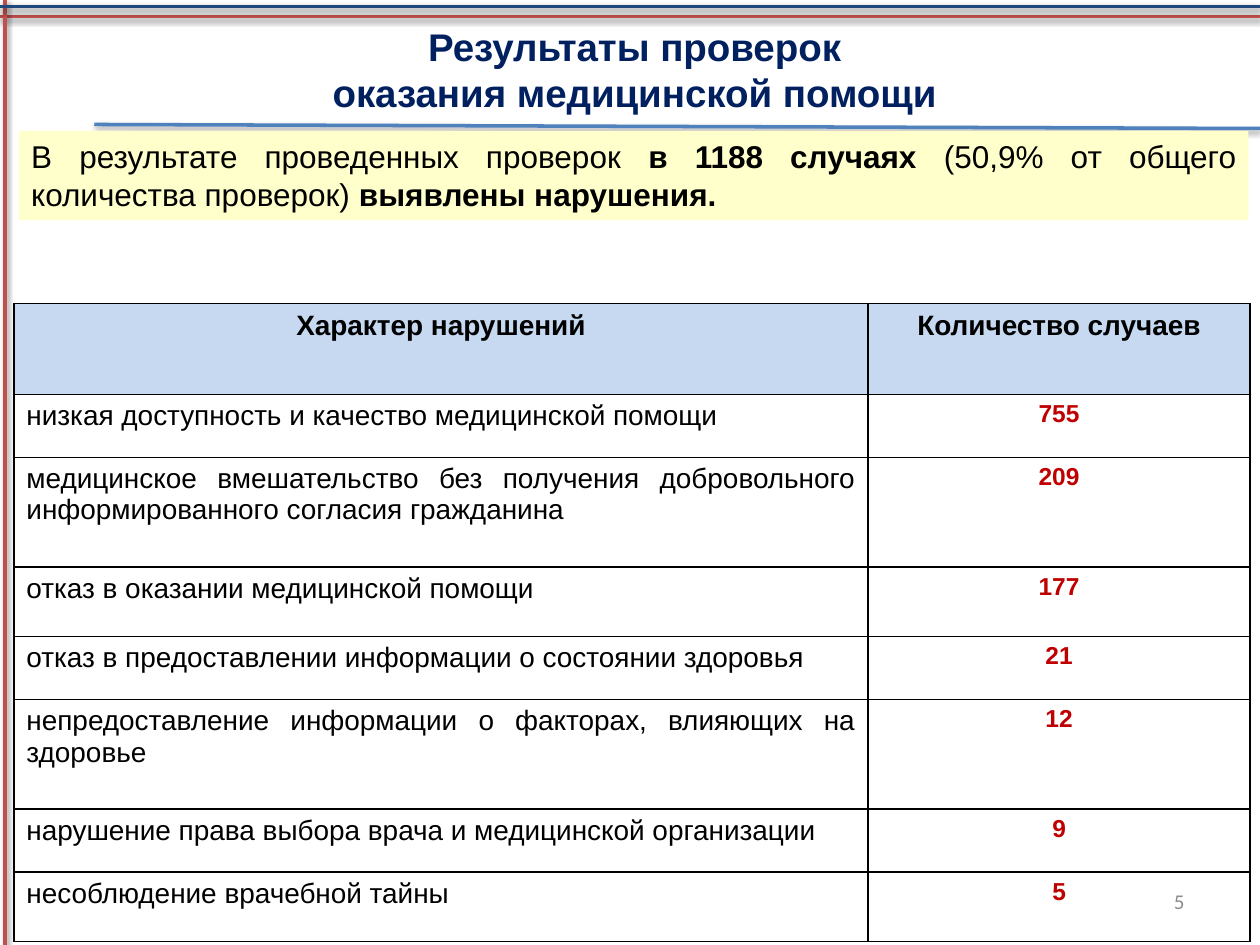
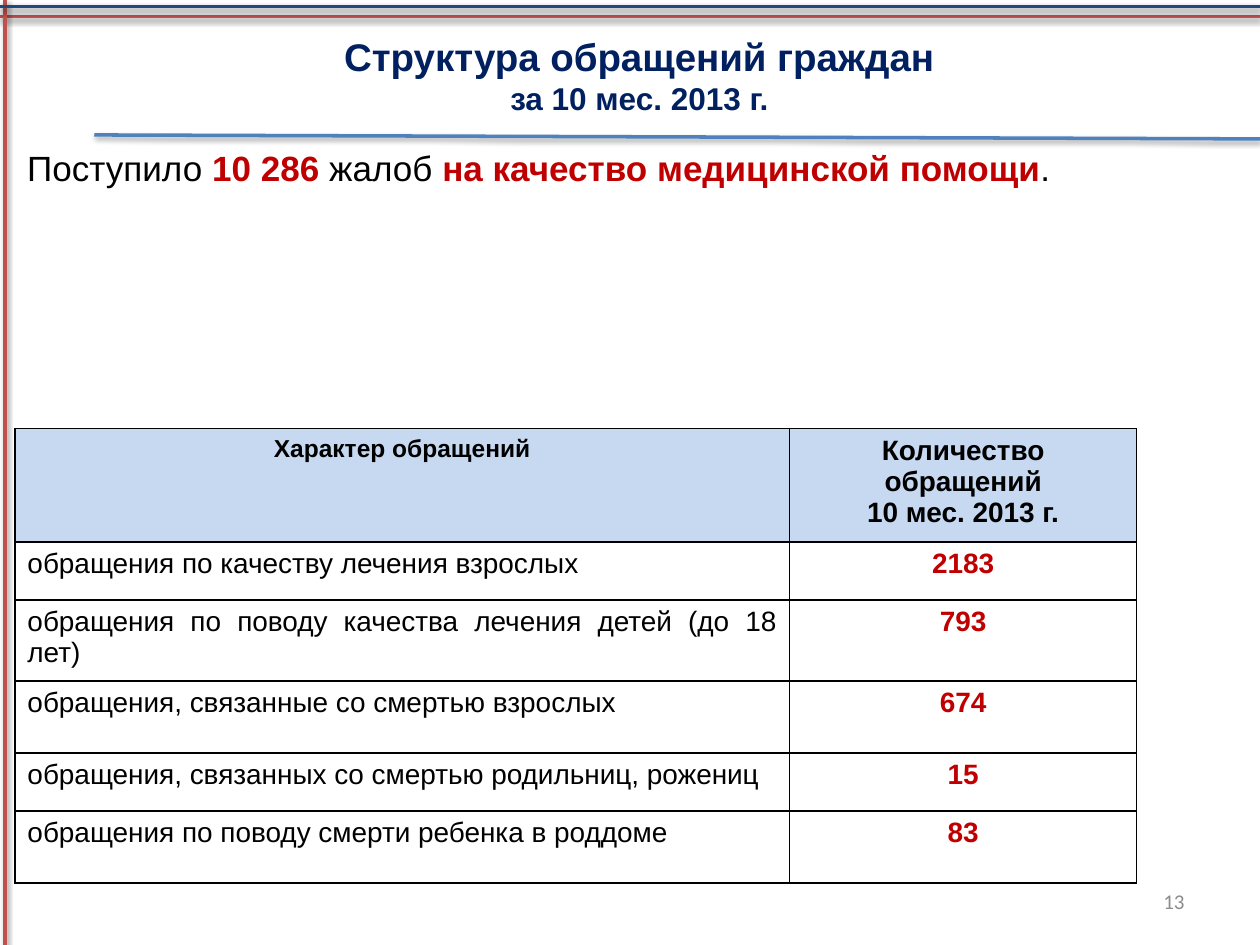
from lxml.etree import SubElement
from pptx import Presentation
from pptx.dml.color import RGBColor
from pptx.enum.shapes import MSO_CONNECTOR as Connector, MSO_SHAPE as Preset
from pptx.enum.text import MSO_ANCHOR as Anchor, MSO_AUTO_SIZE as AutoSize, PP_ALIGN as Align
from pptx.oxml import parse_xml
from pptx.oxml.ns import nsdecls, qn
from pptx.util import Cm, Pt

WIDTH, HEIGHT = 25.4, 19.05
BLACK, RED, NAVY, GREY = "000000", "C00000", "002060", "8C8C8C"
BAND_RED, BAND_BLUE, RULE_BLUE = "C0504D", "1F497D", "4F81BD"
HEADER_FILL, NOTE_FILL = "C6D9F1", "FFFFCC"
NUMBER_BOX = (18.21, 17.65, 5.92, 1.02)
RULE_LEFT, RULE_DROP = 1.9, 0.08


def rgb(hex_code):
    return RGBColor.from_string(hex_code)


def cm_box(box):
    return [Cm(length) for length in box]


def write(frame, *lines, align=Align.LEFT, anchor=Anchor.TOP, wrap=True,
          size=16, color=BLACK, bold=False, font="Arial"):
    """Fill a frame; a line is a string or a list of (text, changed format) spans."""
    frame.word_wrap = wrap
    frame.vertical_anchor = anchor
    for index, line in enumerate(lines):
        para = frame.add_paragraph() if index else frame.paragraphs[0]
        para.alignment = align
        for text, changes in [(line, {})] if isinstance(line, str) else line:
            look = {"size": size, "color": color, "bold": bold, **changes}
            span = para.add_run()
            span.text = text
            span.font.name = font
            span.font.size = Pt(look["size"])
            span.font.bold = look["bold"]
            span.font.color.rgb = rgb(look["color"])


def add_line(page, start, end, color):
    """Draw a straight line with a soft shadow below it."""
    line = page.shapes.add_connector(Connector.STRAIGHT, *cm_box(start + end))
    line.line.color.rgb = rgb(color)
    line.line.width = Pt(2)
    line.element.spPr.append(parse_xml(
        f'<a:effectLst {nsdecls("a")}><a:outerShdw blurRad="40000" dist="20000" dir="5400000" '
        'rotWithShape="0"><a:srgbClr val="000000"><a:alpha val="38000"/></a:srgbClr>'
        '</a:outerShdw></a:effectLst>'))
    return line


def add_master_bands(deck, page):
    """Draw the frame lines on a page and hand them over to the slide master."""
    bands = [
        ((WIDTH, 0.33), (0, 0.33), BAND_RED),
        ((0.1, 0), (0.1, HEIGHT), BAND_RED),
        ((0, 0.13), (WIDTH, 0.13), BAND_BLUE),
    ]
    for start, end, color in bands:
        deck.slide_master.shapes.element.append(add_line(page, start, end, color).element)


def add_heading(page, box, rule_top, *lines):
    """Place the title and the slightly sloping rule below it."""
    title = page.shapes.title
    title.left, title.top, title.width, title.height = cm_box(box)
    title.text_frame.auto_size = AutoSize.NONE
    write(title.text_frame, *lines, align=Align.CENTER, wrap=False,
          size=22, color=NAVY, bold=True)
    add_line(page, (RULE_LEFT, rule_top), (WIDTH, rule_top + RULE_DROP), RULE_BLUE)


def add_text(page, box, *lines, **look):
    write(page.shapes.add_textbox(*cm_box(box)).text_frame, *lines, **look)


def add_page_number(page, number):
    add_text(page, NUMBER_BOX, str(number), align=Align.RIGHT, anchor=Anchor.MIDDLE,
             size=12, color=GREY, font="Calibri")


def add_note(page, box, *lines, **look):
    note = page.shapes.add_shape(Preset.RECTANGLE, *cm_box(box))
    note.shadow.inherit = False
    note.fill.solid()
    note.fill.fore_color.rgb = rgb(NOTE_FILL)
    note.line.fill.background()
    write(note.text_frame, *lines, **look)


def style_cell(cell, fill=None):
    """Give a cell thin black borders and an optional fill."""
    props = cell._tc.get_or_add_tcPr()
    for side in ("a:lnL", "a:lnR", "a:lnT", "a:lnB"):
        border = SubElement(props, qn(side), w=str(Pt(1)))
        SubElement(SubElement(border, qn("a:solidFill")), qn("a:srgbClr"), val=BLACK)
    if fill:
        cell.fill.solid()
        cell.fill.fore_color.rgb = rgb(fill)
    else:
        cell.fill.background()


def add_count_table(page, corner, widths, heights, headers, counts, count_size):
    """Table of kinds and counts; each header is a list of lines."""
    box = (*corner, sum(widths), sum(heights))
    table = page.shapes.add_table(len(heights), len(widths), *cm_box(box)).table
    table.first_row = table.horz_banding = False
    for column, width in zip(table.columns, widths):
        column.width = Cm(width)
    for row, height in zip(table.rows, heights):
        row.height = Cm(height)
    for col, lines in enumerate(headers):
        style_cell(table.cell(0, col), HEADER_FILL)
        write(table.cell(0, col).text_frame, *lines, align=Align.CENTER, bold=True)
    for row, (kind, count) in enumerate(counts, 1):
        kind_cell, count_cell = table.cell(row, 0), table.cell(row, 1)
        style_cell(kind_cell)
        style_cell(count_cell)
        write(kind_cell.text_frame, kind, align=Align.JUSTIFY)
        write(count_cell.text_frame, str(count), align=Align.CENTER,
              size=count_size, color=RED, bold=True)


def build_inspections(page):
    bold = {"bold": True}
    add_page_number(page, 5)
    add_heading(page, (6.38, 0.33, 12.83, 2.13), 2.51,
                "Результаты проверок", "оказания медицинской помощи")
    add_note(page, (0.38, 2.64, 24.79, 1.8), [
        ("В результате проведенных проверок ", {}),
        ("в 1188 случаях ", bold),
        ("(50,9% от общего количества проверок) ", {}),
        ("выявлены нарушения.", bold),
    ], align=Align.JUSTIFY, size=18)
    add_count_table(
        page, (0.28, 6.12), (17.22, 7.7),
        (1.83, 1.27, 2.21, 1.4, 1.27, 2.21, 1.27, 1.4),
        [["Характер нарушений"], ["Количество случаев"]],
        [
            ("низкая доступность и качество медицинской помощи", 755),
            ("медицинское вмешательство без получения добровольного "
             "информированного согласия гражданина", 209),
            ("отказ в оказании медицинской помощи", 177),
            ("отказ в предоставлении информации о состоянии здоровья", 21),
            ("непредоставление информации о факторах, влияющих на здоровье", 12),
            ("нарушение права выбора врача и медицинской организации", 9),
            ("несоблюдение врачебной тайны", 5),
        ], count_size=14)


def build_complaints(page):
    red = {"color": RED, "bold": True}
    add_page_number(page, 13)
    add_heading(page, (6.5, 0.53, 12.78, 1.96), 2.72,
                "Структура обращений граждан", [("за 10 мес. 2013 г.", {"size": 18})])
    add_text(page, (0.3, 2.82, 24.79, 1.63), [
        ("Поступило ", {}),
        ("10 286 ", red),
        ("жалоб ", {}),
        ("на качество медицинской помощи", red),
        (".", {}),
    ], align=Align.JUSTIFY, size=20)
    add_count_table(
        page, (0.3, 8.64), (15.62, 6.99),
        (2.29, 1.17, 1.63, 1.45, 1.17, 1.45),
        [[[("Характер обращений", {"size": 14})]],
         ["Количество обращений", "10 мес. 2013 г."]],
        [
            ("обращения по качеству лечения взрослых", 2183),
            ("обращения по поводу качества лечения детей (до 18 лет)", 793),
            ("обращения, связанные со смертью взрослых", 674),
            ("обращения, связанных со смертью родильниц, рожениц", 15),
            ("обращения по поводу смерти ребенка в роддоме", 83),
        ], count_size=16)


def main():
    deck = Presentation()
    deck.slide_width, deck.slide_height = Cm(WIDTH), Cm(HEIGHT)
    title_only = deck.slide_layouts[5]
    pages = [deck.slides.add_slide(title_only) for _ in range(2)]
    add_master_bands(deck, pages[0])
    for build, page in zip((build_inspections, build_complaints), pages):
        build(page)
    deck.save("out.pptx")


if __name__ == "__main__":
    main()
